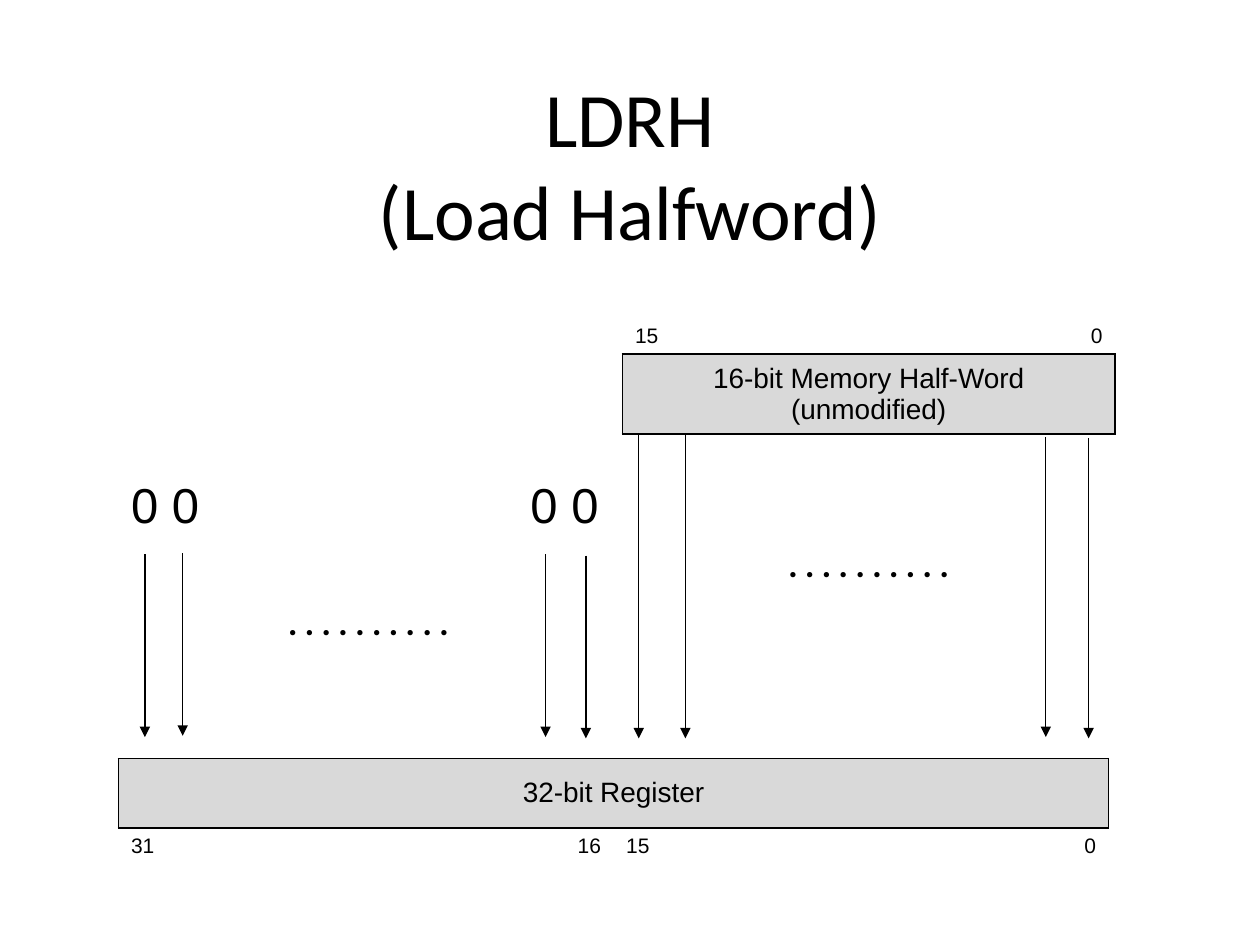
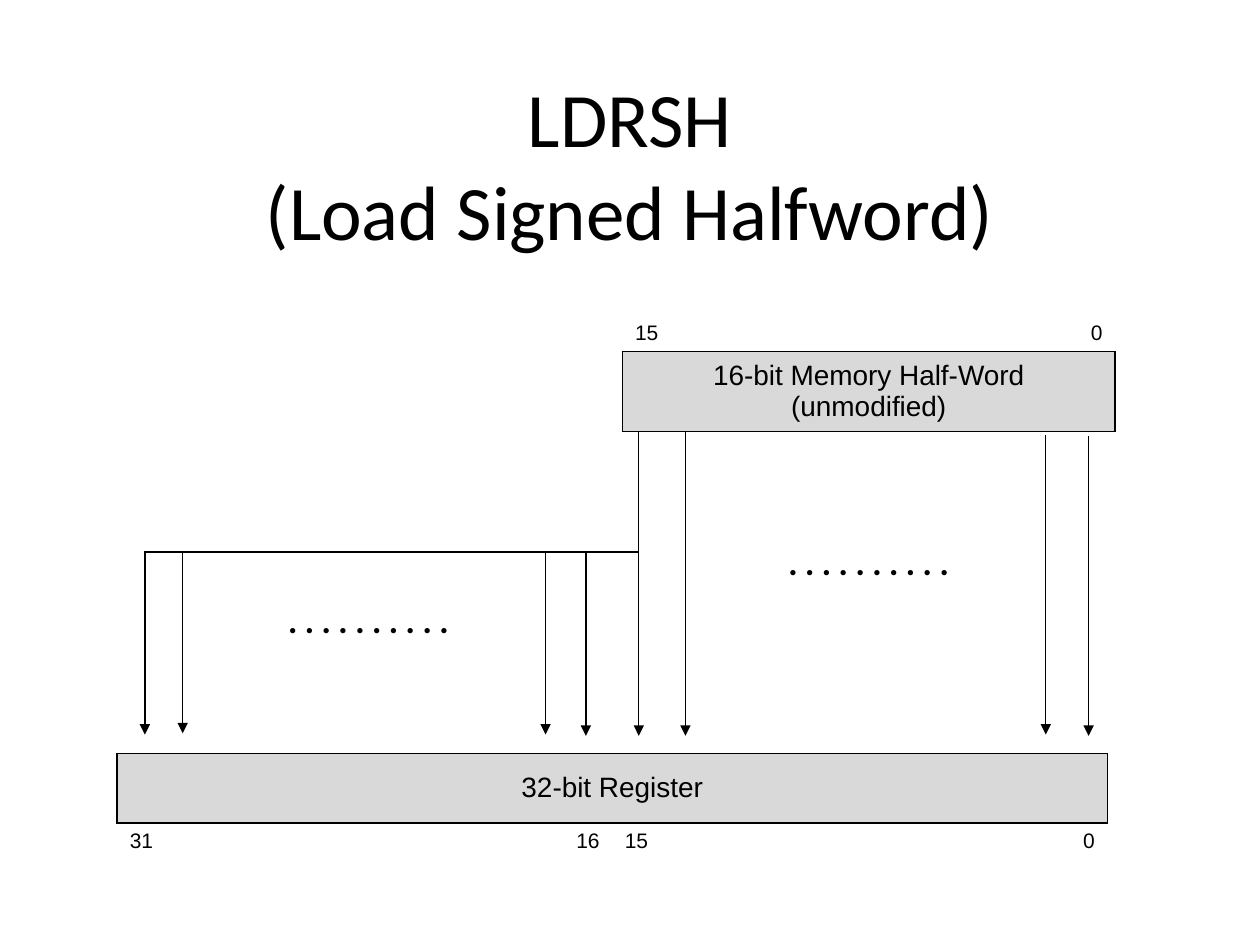
from dataclasses import dataclass

import pptx
import pptx.dml.color
import pptx.enum.shapes
import pptx.enum.text
import pptx.oxml.ns
import pptx.util
from lxml import etree

Inches = pptx.util.Inches
Pt = pptx.util.Pt
qn = pptx.oxml.ns.qn
ALIGN = pptx.enum.text.PP_ALIGN
ANCHOR = pptx.enum.text.MSO_ANCHOR


@dataclass(frozen=True)
class Theme:
    ink: str = "000000"
    band: str = "D9D9D9"
    title_font: str = "Calibri"
    body_font: str = "Arial"
    dots_font: str = "Lato"
    title_size: int = 44
    zeros_size: int = 28
    dots_size: int = 20
    field_size: int = 16
    bit_size: int = 12
    border: float = 1
    arrow: float = 0.75


THEME = Theme()
NO_STYLE = "{2D5ABB26-0587-4C30-8999-92F81FD0307C}"
DOTS = ". . . . . . . . . ."
REGISTER_BITS = {0: "31", 3: "16", 4: "15", 7: "0"}
MEMORY_BITS = {0: "15", 1: "0"}
RIGHT_BITS = ("16", "0")

EXTENSION_ARROWS = [(1.15, 4.4, 5.85), (1.45, 4.39, 5.84),
                    (4.33, 4.4, 5.85), (4.65, 4.41, 5.86)]
MEMORY_ARROWS = [(5.07, 3.45, 5.86), (5.44, 3.44, 5.86),
                 (8.3, 3.47, 5.85), (8.64, 3.48, 5.86)]


def rgb(value):
    return pptx.dml.color.RGBColor.from_string(value)


def write(tf, text, size, font=THEME.body_font, align=ALIGN.LEFT, bold=False):
    tf.word_wrap = True
    p = tf.paragraphs[0]
    p.alignment = align
    for i, line in enumerate(text.split("\n")):
        if i:
            p.add_line_break()
        r = p.add_run()
        r.text = line
        r.font.name = font
        r.font.size = Pt(size)
        r.font.bold = bold
        r.font.color.rgb = rgb(THEME.ink)


def add_text(slide, x, y, w, h, text, size, font, bold=False,
             anchor=ANCHOR.TOP):
    tf = slide.shapes.add_textbox(*map(Inches, (x, y, w, h))).text_frame
    write(tf, text, size, font, ALIGN.CENTER, bold)
    tf.vertical_anchor = anchor


def add_title(slide, text):
    add_text(slide, 0.75, 0.67, 8.5, 1.25, text, THEME.title_size,
             THEME.title_font, anchor=ANCHOR.MIDDLE)


def add_dots(slide, x, y):
    add_text(slide, x, y, 2.35, 0.43, DOTS, THEME.dots_size,
             THEME.dots_font, bold=True)


def add_line(slide, x1, y1, x2, y2, arrow=False):
    c = slide.shapes.add_connector(
        pptx.enum.shapes.MSO_CONNECTOR.STRAIGHT,
        *map(Inches, (x1, y1, x2, y2)))
    c.line.color.rgb = rgb(THEME.ink)
    c.line.width = Pt(THEME.arrow)
    if arrow:
        etree.SubElement(c.line._get_or_add_ln(), qn("a:tailEnd"),
                         type="triangle")
    etree.SubElement(c._element.spPr, qn("a:effectLst"))


def add_grid(slide, x, y, w, row_heights, cols):
    h = sum(row_heights)
    table = slide.shapes.add_table(
        len(row_heights), cols, *map(Inches, (x, y, w, h))).table
    table.first_row = False
    table.horz_banding = False
    table._tbl.tblPr.find(qn("a:tableStyleId")).text = NO_STYLE
    for row, height in zip(table.rows, row_heights):
        row.height = Inches(height)
    for cell in table.iter_cells():
        cell.fill.background()
    return table


def add_border(cell):
    tc_pr = cell._tc.get_or_add_tcPr()
    for i, side in enumerate(("lnL", "lnR", "lnT", "lnB")):
        ln = etree.Element(qn("a:" + side), w=str(Pt(THEME.border)))
        fill = etree.SubElement(ln, qn("a:solidFill"))
        etree.SubElement(fill, qn("a:srgbClr"), val=THEME.ink)
        tc_pr.insert(i, ln)


def fill_field(table, row, name):
    last = len(table.columns) - 1
    for col in range(last + 1):
        cell = table.cell(row, col)
        add_border(cell)
        cell.fill.solid()
        cell.fill.fore_color.rgb = rgb(THEME.band)
    field = table.cell(row, 0)
    field.merge(table.cell(row, last))
    field.vertical_anchor = ANCHOR.MIDDLE
    write(field.text_frame, name, THEME.field_size, align=ALIGN.CENTER)


def fill_bits(table, row, bits, anchor):
    for col, bit in bits.items():
        cell = table.cell(row, col)
        cell.vertical_anchor = anchor
        write(cell.text_frame, bit, THEME.bit_size,
              align=ALIGN.RIGHT if bit in RIGHT_BITS else ALIGN.LEFT)


def add_register(slide, x, y):
    table = add_grid(slide, x, y, 7.86, (0.55, 0.55), 8)
    fill_field(table, 0, "32-bit Register")
    fill_bits(table, 1, REGISTER_BITS, ANCHOR.TOP)


def add_memory(slide, y):
    table = add_grid(slide, 4.94, y, 3.91, (0.58, 0.63), 2)
    fill_bits(table, 0, MEMORY_BITS, ANCHOR.BOTTOM)
    fill_field(table, 1, "16-bit Memory Half-Word (unmodified)")


def add_zeros(slide):
    table = add_grid(slide, 0.94, 3.75, 3.91, (0.57,), 2)
    for col, align in enumerate((ALIGN.LEFT, ALIGN.RIGHT)):
        write(table.cell(0, col).text_frame, "0 0", THEME.zeros_size,
              align=align)


def add_sign_line(slide):
    add_line(slide, 1.14, 4.38, MEMORY_ARROWS[0][0], 4.38)


def add_load_slide(prs, title, register_at, lift, add_extension):
    slide = prs.slides.add_slide(prs.slide_layouts[6])
    add_title(slide, title)
    add_register(slide, *register_at)
    add_memory(slide, 2.23 - lift)
    for x, top, bottom in EXTENSION_ARROWS + MEMORY_ARROWS:
        add_line(slide, x, top - lift, x, bottom - lift, arrow=True)
    add_dots(slide, 5.72, 4.26 - lift)
    add_dots(slide, 1.75, 4.72 - lift)
    add_extension(slide)


def main():
    prs = pptx.Presentation()
    prs.slide_width = Inches(10)
    prs.slide_height = Inches(7.5)
    add_load_slide(prs, "LDRH\n(Load Halfword)", (0.94, 6.02), 0, add_zeros)
    add_load_slide(prs, "LDRSH\n(Load Signed Halfword)", (0.93, 5.98), 0.02,
                   add_sign_line)
    prs.save("out.pptx")


if __name__ == "__main__":
    main()
